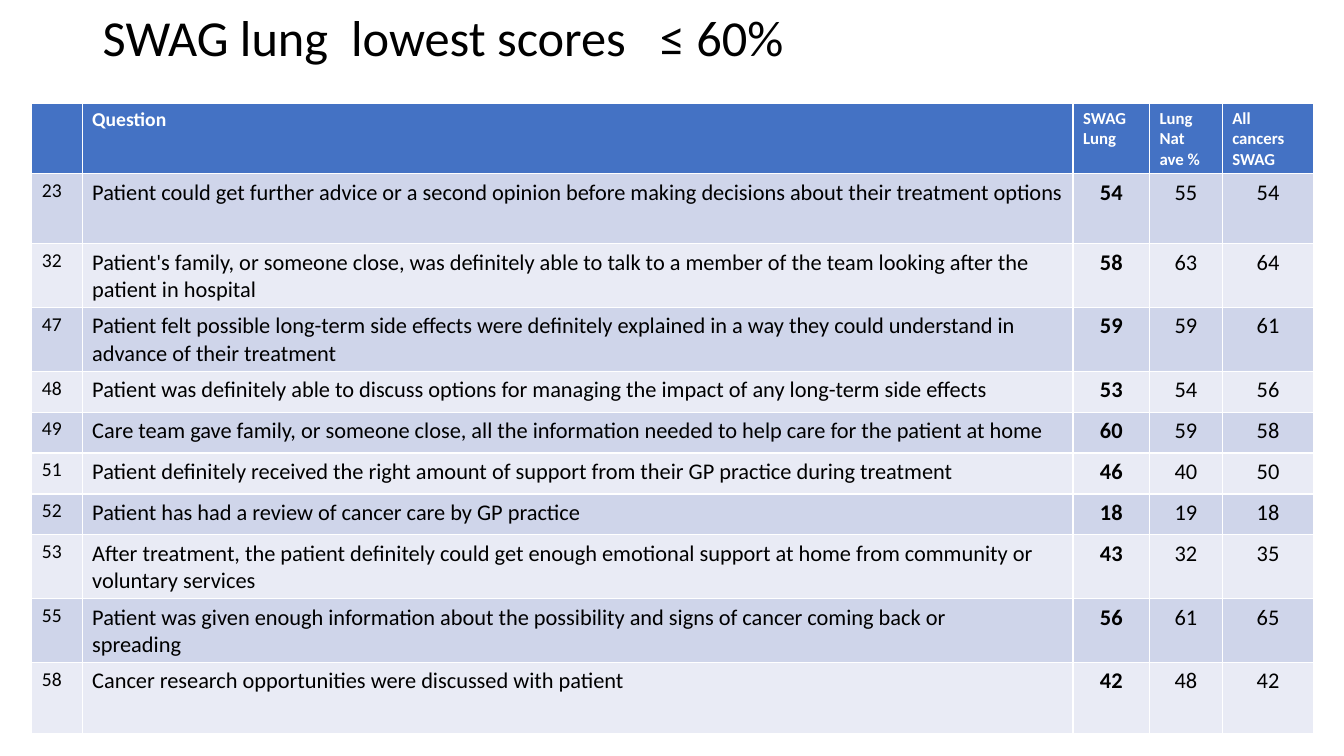
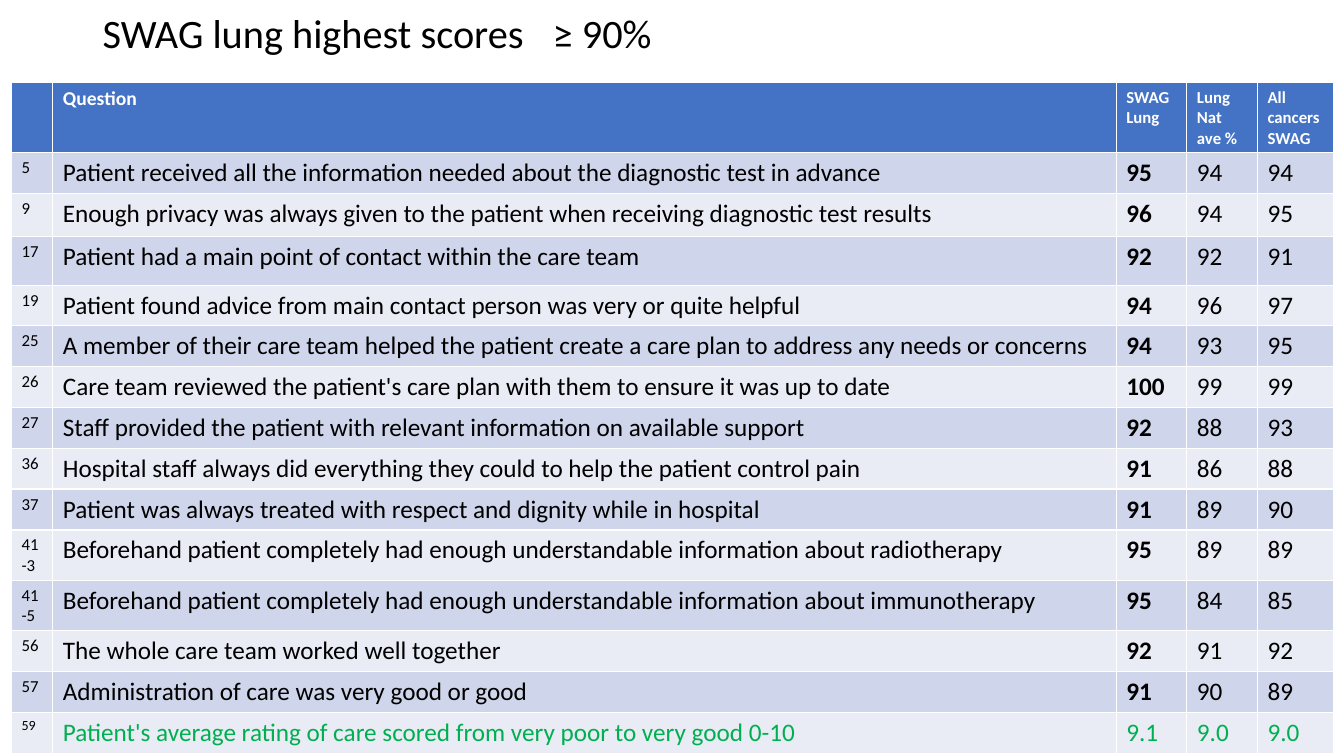
from pptx import Presentation
from pptx.dml.color import RGBColor
from pptx.enum.text import MSO_ANCHOR as Anchor, PP_ALIGN as Align
from pptx.oxml.ns import qn
from pptx.util import Cm, Pt
from lxml.etree import SubElement

# Shared look
FONT = "Calibri"
BLACK, WHITE, GREEN = "000000", "FFFFFF", "00B050"
HEADER_FILL = "4472C4"
BANDS = ("CFD5EA", "E9EBF5")
HEADINGS = ("", "Question", "SWAG\nLung", "Lung\nNat ave %", "All cancers SWAG")
HEADING_SIZES = (14, 14, 12, 12, 12)
SWAG_LUNG_COLUMN = 2

# Question number, question, SWAG lung, lung national average, all cancers SWAG
LOWEST = [
    ("23", "Patient could get further advice or a second opinion before making decisions "
           "about their treatment options", "54", "55", "54"),
    ("32", "Patient's family, or someone close, was definitely able to talk to a member of "
           "the team looking after the patient in hospital", "58", "63", "64"),
    ("47", "Patient felt possible long-term side effects were definitely explained in a way "
           "they could understand in advance of their treatment", "59", "59", "61"),
    ("48", "Patient was definitely able to discuss options for managing the impact of any "
           "long-term side effects", "53", "54", "56"),
    ("49", "Care team gave family, or someone close, all the information needed to help "
           "care for the patient at home", "60", "59", "58"),
    ("51", "Patient definitely received the right amount of support from their GP practice "
           "during treatment", "46", "40", "50"),
    ("52", "Patient has had a review of cancer care by GP practice", "18", "19", "18"),
    ("53", "After treatment, the patient definitely could get enough emotional support at "
           "home from community or voluntary services", "43", "32", "35"),
    ("55", "Patient was given enough information about the possibility and signs of cancer "
           "coming back or\nspreading", "56", "61", "65"),
    ("58", "Cancer research opportunities were discussed with patient", "42", "48", "42"),
]
HIGHEST = [
    ("5", "Patient received all the information needed about the diagnostic test in advance",
     "95", "94", "94"),
    ("9", "Enough privacy was always given to the patient when receiving diagnostic test "
          "results", "96", "94", "95"),
    ("17", "Patient had a main point of contact within the care team", "92", "92", "91"),
    ("19", "Patient found advice from main contact person was very or quite helpful",
     "94", "96", "97"),
    ("25", "A member of their care team helped the patient create a care plan to address "
           "any needs or concerns", "94", "93", "95"),
    ("26", "Care team reviewed the patient's care plan with them to ensure it was up to date",
     "100", "99", "99"),
    ("27", "Staff provided the patient with relevant information on available support",
     "92", "88", "93"),
    ("36", "Hospital staff always did everything they could to help the patient control pain",
     "91", "86", "88"),
    ("37", "Patient was always treated with respect and dignity while in hospital",
     "91", "89", "90"),
    ("41-3", "Beforehand patient completely had enough understandable information about "
             "radiotherapy", "95", "89", "89"),
    ("41-5", "Beforehand patient completely had enough understandable information about "
             "immunotherapy", "95", "84", "85"),
    ("56", "The whole care team worked well together", "92", "91", "92"),
    ("57", "Administration of care was very good or good", "91", "90", "89"),
    ("59", "Patient's average rating of care scored from very poor to very good 0-10",
     "9.1", "9.0", "9.0"),
]


def rgb(value):
    return RGBColor.from_string(value)


def write(frame, text, size, color=BLACK, bold=False, align=None):
    frame.text = text
    for paragraph in frame.paragraphs:
        paragraph.alignment = align
        for run in paragraph.runs:
            font = run.font
            font.name, font.size, font.bold = FONT, Pt(size), bold
            font.color.rgb = rgb(color)


def add_title(slide, text, top, height, size, tab_stops):
    """Place the title; tab_stops are in cm from the start of the text."""
    frame = slide.shapes.add_textbox(Cm(2.34), Cm(top), Cm(29.2), Cm(height)).text_frame
    frame.word_wrap = True
    frame.vertical_anchor = Anchor.MIDDLE
    write(frame, text, size)
    paragraph = frame.paragraphs[0]
    paragraph.line_spacing = 0.9
    tabs = SubElement(paragraph._p.get_or_add_pPr(), qn("a:tabLst"))
    for stop in tab_stops:
        SubElement(tabs, qn("a:tab"), pos=str(Cm(stop)), algn="l")


def fill_cell(cell, fill, text, size, **style):
    cell.fill.solid()
    cell.fill.fore_color.rgb = rgb(fill)
    write(cell.text_frame, text, size, **style)


def add_scores(slide, scores, left, top, widths, heights, number_size, text_size, align=None):
    """Add the banded score table and return it."""
    table = slide.shapes.add_table(len(scores) + 1, len(widths), Cm(left), Cm(top),
                                   Cm(sum(widths)), Cm(sum(heights))).table
    for column, width in zip(table.columns, widths):
        column.width = Cm(width)
    for row, height in zip(table.rows, heights):
        row.height = Cm(height)
    for c, (heading, size) in enumerate(zip(HEADINGS, HEADING_SIZES)):
        fill_cell(table.cell(0, c), HEADER_FILL, heading, size, color=WHITE, bold=True)
    for r, score in enumerate(scores):
        for c, text in enumerate(score):
            fill_cell(table.cell(r + 1, c), BANDS[r % 2], text,
                      text_size if c else number_size,
                      bold=c == SWAG_LUNG_COLUMN,
                      align=align if c >= SWAG_LUNG_COLUMN else None)
    return table


def main():
    deck = Presentation()
    deck.slide_width, deck.slide_height = Cm(33.87), Cm(19.05)
    blank = deck.slide_layouts[6]

    # Lowest scores
    slide = deck.slides.add_slide(blank)
    add_title(slide, "SWAG lung\tlowest scores\t≤ 60%", 0, 2.03, 36, (6.26, 14.04))
    add_scores(slide, LOWEST, 0.8, 2.6, (1.27, 24.97, 1.93, 1.83, 2.31),
               [1.68, 1.76] + [1.5] * 2 + [1.03] * 4 + [1.5] * 2 + [1.8],
               14, 16, Align.CENTER)

    # Highest scores, closing with the average rating in green
    slide = deck.slides.add_slide(blank)
    add_title(slide, "SWAG lung highest scores\t≥ 90%", 0.28, 1.25, 28.8, (11.34,))
    table = add_scores(slide, HIGHEST, 0.29, 2.07, (1.04, 26.8, 1.78, 1.78, 1.93),
                       [1.2, 0.94, 1.09, 1.23, 0.94] + [1.03] * 10, 12, 18)
    number, *rating = HIGHEST[-1]
    last = len(HIGHEST)
    write(table.cell(last, 0).text_frame, number, 10)
    for c, text in enumerate(rating, 1):
        write(table.cell(last, c).text_frame, text, 18, GREEN)

    deck.save("out.pptx")


if __name__ == "__main__":
    main()
